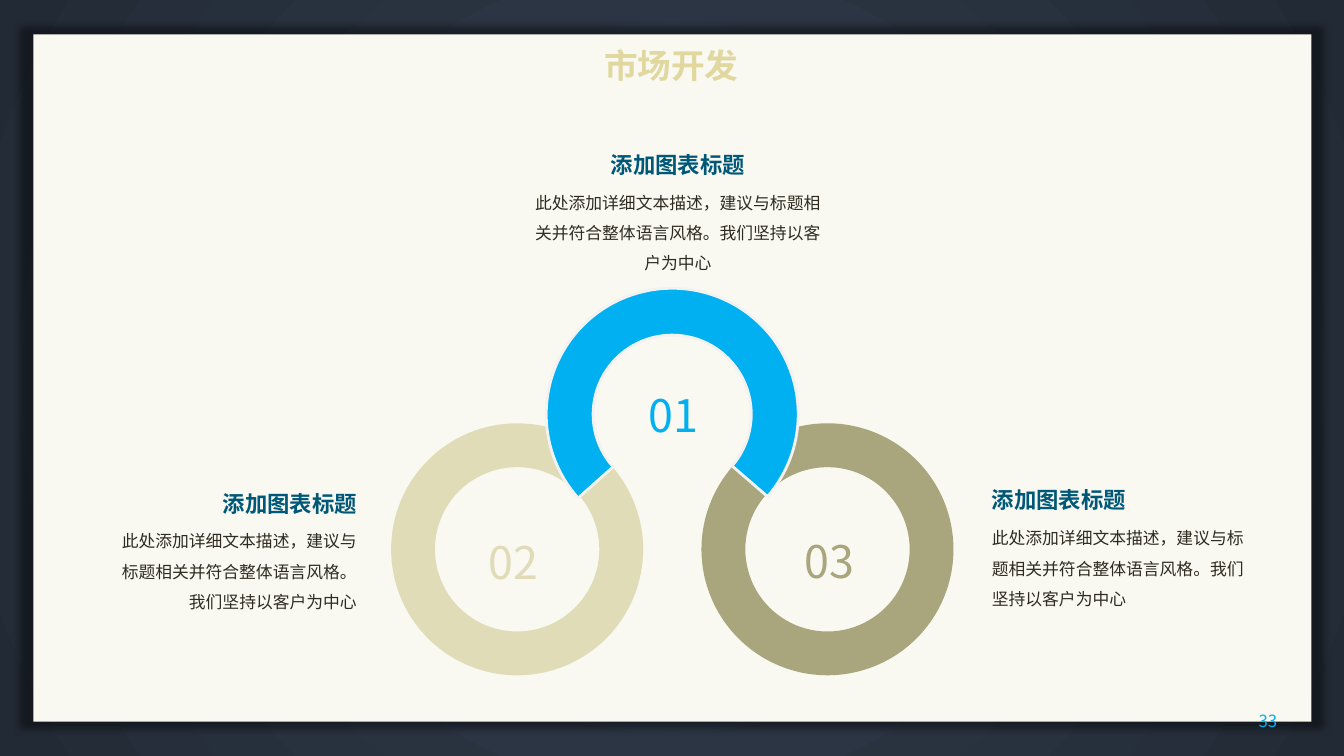
"""Build the market development slide with three linked rings."""
from dataclasses import dataclass
from typing import Any, Optional

import lxml.etree
import pptx
import pptx.dml.color
import pptx.enum.shapes
import pptx.enum.text
import pptx.oxml.ns
import pptx.util

Pt = pptx.util.Pt
Align = pptx.enum.text.PP_ALIGN
Anchor = pptx.enum.text.MSO_ANCHOR
qn = pptx.oxml.ns.qn


@dataclass(frozen=True)
class Theme:
    font: str = "Noto Sans CJK SC"
    glow: str = "333F50"
    edge: str = "222A35"
    paper: str = "F9F8F1"
    blue: str = "00B0F0"
    sand: str = "DFDCB7"
    olive: str = "A9A57C"
    outline: str = "F2F2F2"
    gold: str = "E1D8A0"
    heading: str = "005878"
    body: str = "2F2B20"
    title_size: int = 24
    number_size: int = 32
    heading_size: int = 16
    body_size: int = 12


@dataclass(frozen=True)
class Box:
    left: float
    top: float
    width: float
    height: float

    def lengths(self) -> tuple:
        return Pt(self.left), Pt(self.top), Pt(self.width), Pt(self.height)


@dataclass(frozen=True)
class Style:
    size: int
    color: str
    align: Any
    bold: bool = False
    spacing: float = 1.0
    inset: float = 3.6
    anchor: Any = Anchor.TOP
    grow: bool = True


@dataclass(frozen=True)
class Ring:
    left: float
    top: float
    start: float
    end: float
    thickness: float
    color: str
    outline: Optional[str] = None


@dataclass(frozen=True)
class Number:
    text: str
    left: float
    top: float
    color: str


@dataclass(frozen=True)
class Caption:
    heading: Box
    body: Box
    align: Any


THEME = Theme()
DIAMETER = 180
HEADING = "添加图表标题"
BODY = "此处添加详细文本描述，建议与标题相关并符合整体语言风格。我们坚持以客户为中心"

RINGS = [
    Ring(501.1, 302.4, 227, 221.3, 31.3, THEME.olive),
    Ring(279.4, 302.4, 318.7, 313, 31.3, THEME.sand),
    Ring(390.2, 205.9, 138.3, 40.8, 33.5, THEME.blue, THEME.outline),
]
NUMBERS = [
    Number("01", 446.4, 257.8, THEME.blue),
    Number("02", 332.1, 362.9, THEME.sand),
    Number("03", 558, 362.2, THEME.olive),
]
CAPTIONS = [
    Caption(Box(375.1, 104.4, 218.2, 26.6), Box(375.1, 126.7, 218.2, 72.7), Align.CENTER),
    Caption(Box(704.9, 343.4, 218.2, 26.6), Box(704.9, 366.5, 195.8, 72.7), Align.LEFT),
    Caption(Box(40.3, 346.3, 218.2, 26.6), Box(79.9, 368.6, 178.6, 72.7), Align.RIGHT),
]


def rgb(color: str) -> pptx.dml.color.RGBColor:
    return pptx.dml.color.RGBColor.from_string(color)


def paint_background(slide: Any) -> None:
    fill = slide.background.fill
    fill.gradient()
    for stop, color in zip(fill.gradient_stops, (THEME.glow, THEME.edge)):
        stop.color.rgb = rgb(color)
    gradient = slide.element.find(".//" + qn("a:gradFill"))
    gradient.remove(gradient.find(qn("a:lin")))
    circle = lxml.etree.SubElement(gradient, qn("a:path"), {"path": "circle"})
    sides = {side: "50000" for side in "ltrb"}
    lxml.etree.SubElement(circle, qn("a:fillToRect"), sides)


def add_paper(shapes: Any) -> None:
    kind = pptx.enum.shapes.MSO_SHAPE.RECTANGLE
    shape = shapes.add_shape(kind, *Box(23.8, 24.5, 913, 491).lengths())
    shape.fill.solid()
    shape.fill.fore_color.rgb = rgb(THEME.paper)
    shape.line.fill.background()
    shape.shadow.inherit = False
    effects = shape.element.spPr.find(qn("a:effectLst"))
    shadow = lxml.etree.SubElement(effects, qn("a:outerShdw"), {
        "blurRad": str(Pt(5)), "sx": "102000", "sy": "102000",
        "algn": "ctr", "rotWithShape": "0"})
    color = lxml.etree.SubElement(shadow, qn("a:srgbClr"), {"val": "000000"})
    lxml.etree.SubElement(color, qn("a:alpha"), {"val": "40000"})


def add_ring(shapes: Any, ring: Ring) -> None:
    kind = pptx.enum.shapes.MSO_SHAPE.BLOCK_ARC
    box = Box(ring.left, ring.top, DIAMETER, DIAMETER)
    shape = shapes.add_shape(kind, *box.lengths())
    shape.adjustments[0] = ring.start * 0.6
    shape.adjustments[1] = ring.end * 0.6
    shape.adjustments[2] = ring.thickness / DIAMETER
    shape.fill.solid()
    shape.fill.fore_color.rgb = rgb(ring.color)
    shape.shadow.inherit = False
    if ring.outline:
        shape.line.color.rgb = rgb(ring.outline)
        shape.line.width = Pt(2)
    else:
        shape.line.fill.background()


def add_text(shapes: Any, box: Box, text: str, style: Style) -> None:
    text_frame = shapes.add_textbox(*box.lengths()).text_frame
    text_frame.word_wrap = True
    text_frame.vertical_anchor = style.anchor
    if style.grow:
        text_frame.auto_size = pptx.enum.text.MSO_AUTO_SIZE.SHAPE_TO_FIT_TEXT
    text_frame.margin_left = text_frame.margin_right = Pt(style.inset)
    text_frame.margin_top = text_frame.margin_bottom = Pt(3.6)
    text_frame.text = text
    paragraph = text_frame.paragraphs[0]
    paragraph.alignment = style.align
    paragraph.line_spacing = style.spacing
    font = paragraph.runs[0].font
    font.size = Pt(style.size)
    font.bold = style.bold
    font.color.rgb = rgb(style.color)
    font.name = THEME.font
    properties = paragraph.runs[0]._r.get_or_add_rPr()
    lxml.etree.SubElement(properties, qn("a:ea"), {"typeface": THEME.font})


def add_caption(shapes: Any, caption: Caption) -> None:
    group = shapes.add_group_shape()
    add_text(group.shapes, caption.heading, HEADING,
             Style(THEME.heading_size, THEME.heading, caption.align, bold=True))
    add_text(group.shapes, caption.body, BODY,
             Style(THEME.body_size, THEME.body, caption.align, spacing=1.5))


def main() -> None:
    presentation = pptx.Presentation()
    presentation.slide_width, presentation.slide_height = Pt(960), Pt(540)
    slide = presentation.slides.add_slide(presentation.slide_layouts[6])
    paint_background(slide)
    add_paper(slide.shapes)
    for ring in RINGS:
        add_ring(slide.shapes, ring)
    for number in NUMBERS:
        add_text(slide.shapes, Box(number.left, number.top, 69.1, 61.2), number.text,
                 Style(THEME.number_size, number.color, Align.CENTER, spacing=1.4))
    for caption in CAPTIONS:
        add_caption(slide.shapes, caption)
    add_text(slide.shapes, Box(882, 500.4, 37.4, 28.8), "33",
             Style(THEME.body_size, THEME.blue, Align.RIGHT, inset=7.2,
                   anchor=Anchor.MIDDLE, grow=False))
    add_text(slide.shapes, Box(40.3, 28.8, 878.4, 36), "市场开发",
             Style(THEME.title_size, THEME.gold, Align.CENTER, bold=True, inset=7.2))
    presentation.save("out.pptx")


if __name__ == "__main__":
    main()
